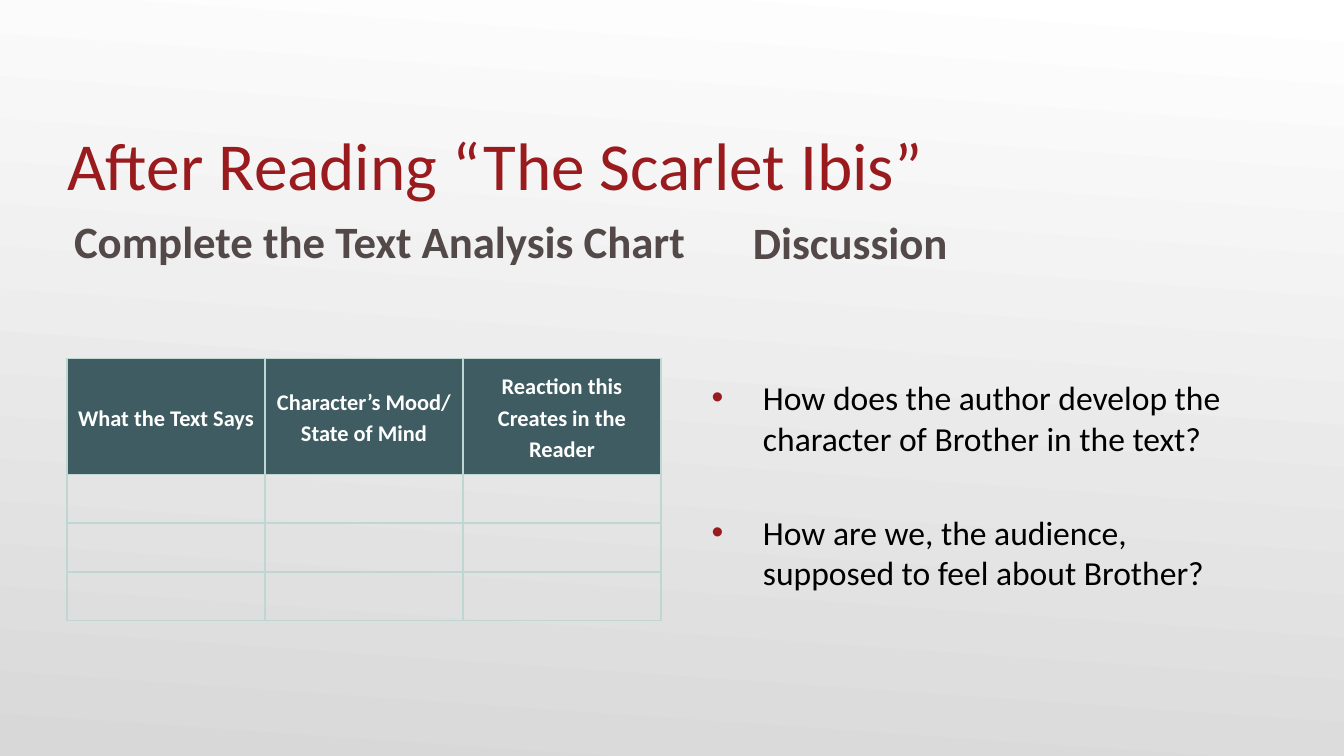
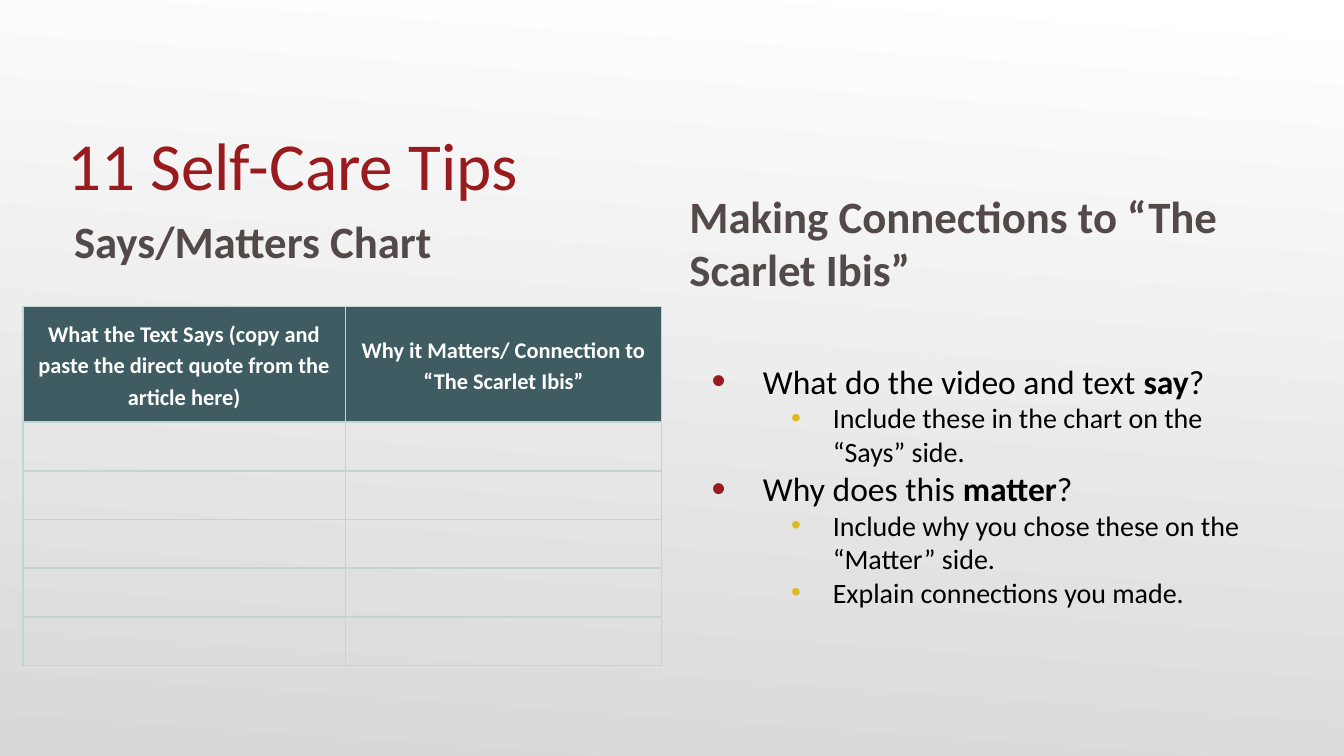
from lxml import etree
from pptx import Presentation
from pptx.dml.color import RGBColor
from pptx.enum.text import MSO_ANCHOR, PP_ALIGN
from pptx.oxml.ns import qn
from pptx.util import Cm, Pt

MIDDLE, BOTTOM, CENTER = MSO_ANCHOR.MIDDLE, MSO_ANCHOR.BOTTOM, PP_ALIGN.CENTER

COLORS = {
    "title": "991B1E", "heading": "534949", "body": "000000", "sub_bullet": "DCBA25",
    "header": "3E5C61", "header_text": "FFFFFF", "border": "BED7D3",
    "bg_top": "FFFFFF", "bg_bottom": "D8D8D8",
}

# Each bullet: level, space before in points, runs as (text, bold)
SLIDES = [
    {
        "title": "After Reading “The Scarlet Ibis”",
        "headings": [("Complete the Text Analysis Chart", (1.27, 3.86, 12, 1.37)),
                     ("Discussion", (14.1, 3.89, 4.22, 1.37))],
        "bullet_size": 100,
        "bullets": [
            (0, 0, [("How does the author develop the character of Brother in the text?", False)]),
            (0, 29, [("How are we, the audience, supposed to feel about Brother?", False)]),
        ],
        "table": {
            "at": (1.27, 6.78), "cols": [3.74] * 3, "empty_rows": 3,
            "header": ["What the Text Says", "Character’s Mood/ State of Mind",
                       "Reaction this Creates in the Reader"],
        },
    },
    {
        "title": "11 Self-Care Tips",
        "headings": [("Says/Matters Chart", (1.27, 3.86, 11.23, 1.37)),
                     ("Making Connections to “The Scarlet Ibis”", (12.9, 3.89, 11.23, 1.37))],
        "bullet_size": 120,
        "bullets": [
            (0, 0, [("What do the video and text ", False), ("say", True), ("?", False)]),
            (1, 0, [("Include these in the chart on the “Says” side.", False)]),
            (0, 0, [("Why does this ", False), ("matter", True), ("?", False)]),
            (1, 0, [("Include why you chose these on the “Matter” side.", False)]),
            (1, 0, [("Explain connections you made.", False)]),
        ],
        "table": {
            "at": (0.43, 5.79), "cols": [6.1, 5.97], "empty_rows": 5,
            "header": ["What the Text Says (copy and paste the direct quote from the article here)",
                       "Why it Matters/ Connection to “The Scarlet Ibis”"],
        },
    },
]

TITLE_BOX = (1.27, 1.47, 22.86, 2.39)
BODY_BOX = (12.9, 5.23, 11.23, 8)
HEADER_HEIGHT, ROW_HEIGHT, CELL_MARGIN = 2.19, 0.92, 0.2
SIDES = ("left", "top", "right", "bottom")

# Per level: text size, left margin and hanging indent in cm, bullet colour
LEVELS = [(18, 1.27, -0.97, "title"), (15, 2.59, -0.79, "sub_bullet")]


def rgb(name):
    return RGBColor.from_string(COLORS[name])


def set_margins(obj, values):
    for side, value in zip(SIDES, values):
        setattr(obj, f"margin_{side}", Cm(value))


def add_run(p, text, size, color, bold=False):
    r = p.add_run()
    r.text = text
    for key, value in {"name": "Calibri", "size": Pt(size), "bold": bold}.items():
        setattr(r.font, key, value)
    r.font.color.rgb = rgb(color)


def add_box(slide, box, margins, anchor):
    tf = slide.shapes.add_textbox(*map(Cm, box)).text_frame
    tf.word_wrap = True
    tf.vertical_anchor = anchor
    set_margins(tf, margins)
    return tf


def set_bullet(p, level, size_percent):
    _, margin, indent, color = LEVELS[level]
    pPr = p._p.get_or_add_pPr()
    pPr.set("marL", str(Cm(margin)))
    pPr.set("indent", str(Cm(indent)))
    clr = etree.SubElement(pPr, qn("a:buClr"))
    etree.SubElement(clr, qn("a:srgbClr"), val=COLORS[color])
    etree.SubElement(pPr, qn("a:buSzPct"), val=str(size_percent * 1000))
    etree.SubElement(pPr, qn("a:buFont"), typeface="Arial")
    etree.SubElement(pPr, qn("a:buChar"), char="•")


def add_bullets(slide, bullets, bullet_size):
    tf = add_box(slide, BODY_BOX, (0.25, 0, 0.25, 0.13), MIDDLE)
    for i, (level, before, runs) in enumerate(bullets):
        p = tf.add_paragraph() if i else tf.paragraphs[0]
        p.level = level
        set_bullet(p, level, 100 if level else bullet_size)
        p.space_before = Pt(before)
        for text, bold in runs:
            add_run(p, text, LEVELS[level][0], "body", bold)


def set_borders(cell):
    tcPr = cell._tc.get_or_add_tcPr()
    for i, tag in enumerate(("a:lnL", "a:lnR", "a:lnT", "a:lnB")):
        ln = etree.Element(qn(tag), w=str(Pt(1)))
        fill = etree.SubElement(ln, qn("a:solidFill"))
        etree.SubElement(fill, qn("a:srgbClr"), val=COLORS["border"])
        tcPr.insert(i, ln)


def add_chart_table(slide, at, cols, header, empty_rows):
    heights = [HEADER_HEIGHT] + [ROW_HEIGHT] * empty_rows
    size = (sum(cols), sum(heights))
    table = slide.shapes.add_table(len(heights), len(cols), *map(Cm, at + size)).table
    table.first_row = table.horz_banding = False
    for col, width in zip(table.columns, cols):
        col.width = Cm(width)
    for row, height in zip(table.rows, heights):
        row.height = Cm(height)
    for cell in table.iter_cells():
        cell.fill.background()
        set_margins(cell, (0, 0, 0, 0))
        set_borders(cell)
    for cell, text in zip(table.rows[0].cells, header):
        cell.fill.solid()
        cell.fill.fore_color.rgb = rgb("header")
        cell.vertical_anchor = MIDDLE
        set_margins(cell, [CELL_MARGIN] * 4)
        p = cell.text_frame.paragraphs[0]
        for key, value in {"alignment": CENTER, "line_spacing": 1.15, "space_after": Pt(6)}.items():
            setattr(p, key, value)
        add_run(p, text, 12, "header_text", True)


def set_background(slide):
    fill = slide.background.fill
    fill.gradient()
    fill.gradient_angle = 266
    for stop, color in zip(fill.gradient_stops, ("bg_top", "bg_bottom")):
        stop.color.rgb = rgb(color)


def add_slide(prs, content):
    slide = prs.slides.add_slide(prs.slide_layouts[6])
    set_background(slide)
    tf = add_box(slide, TITLE_BOX, (0, 0.13, 0, 0), BOTTOM)
    add_run(tf.paragraphs[0], content["title"], 36, "title")
    for text, box in content["headings"]:
        tf = add_box(slide, box, (0.13, 0, 0.13, 0), MIDDLE)
        add_run(tf.paragraphs[0], text, 24, "heading", True)
    add_bullets(slide, content["bullets"], content["bullet_size"])
    add_chart_table(slide, **content["table"])


def main():
    prs = Presentation()
    prs.slide_width, prs.slide_height = Cm(25.4), Cm(14.29)
    for content in SLIDES:
        add_slide(prs, content)
    prs.save("out.pptx")


if __name__ == "__main__":
    main()
